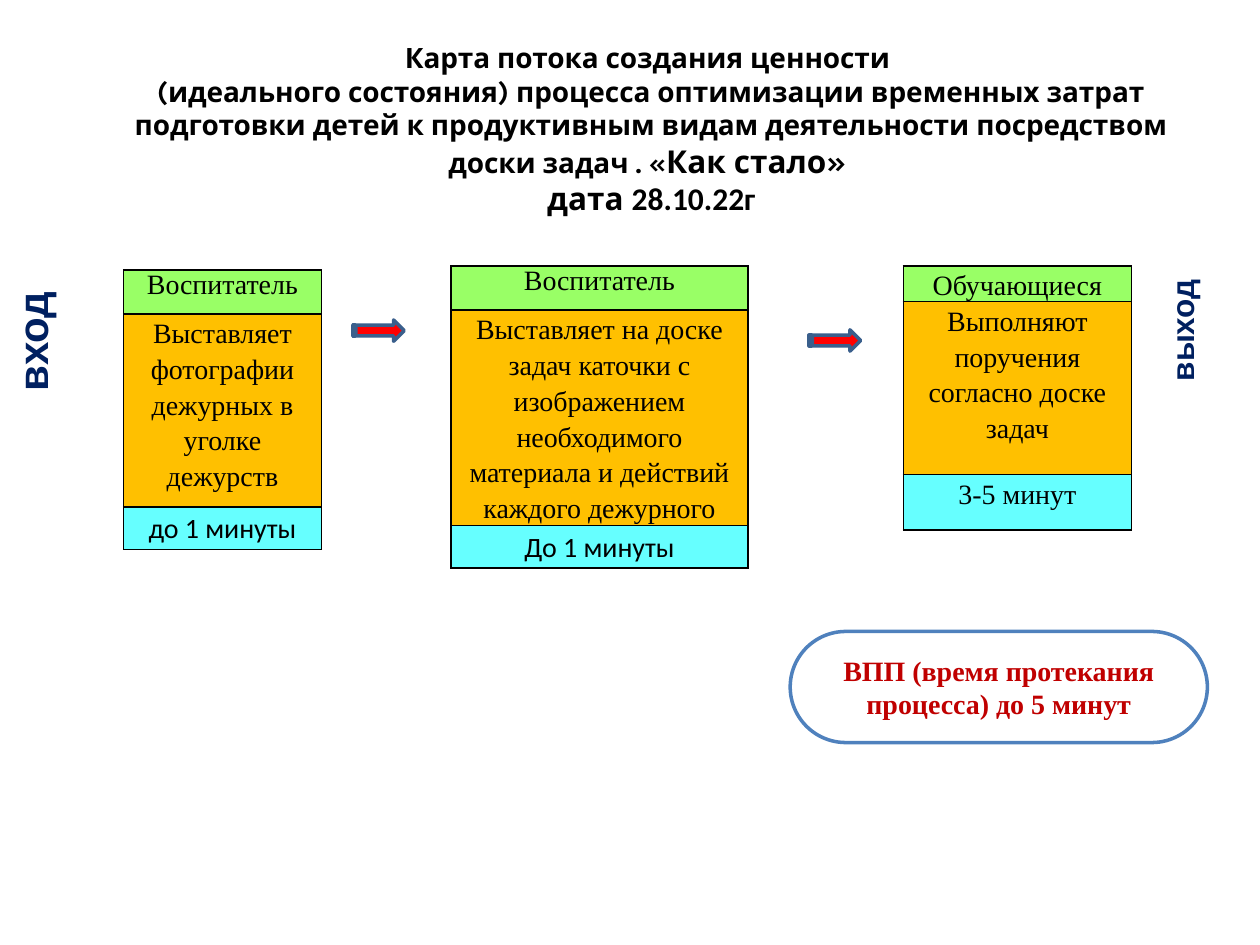
import pptx
import pptx.util
import pptx.dml.color
import pptx.enum.shapes
import pptx.enum.text
from lxml import etree
from pptx.util import Cm, Pt

COLORS = {
    "text": "000000", "border": "000000", "white": "FFFFFF",
    "who": "99FF66", "action": "FFC000", "duration": "66FFFF",
    "navy": "002060", "arrow": "FF0000", "arrow_line": "3A5F8C",
    "total": "C00000", "total_line": "4F81BD",
}
SERIF = "Times New Roman"
A = "http://schemas.openxmlformats.org/drawingml/2006/main"
CENTER = pptx.enum.text.PP_ALIGN.CENTER
MIDDLE = pptx.enum.text.MSO_ANCHOR.MIDDLE
SHAPES = pptx.enum.shapes.MSO_SHAPE


def rgb(name):
    return pptx.dml.color.RGBColor.from_string(COLORS[name])


def box_cm(box):
    return [Cm(length) for length in box]


def style(paragraph, size, face, color, bold=False):
    paragraph.alignment = CENTER
    font = paragraph.font
    font.size, font.name, font.bold = Pt(size), face, bold
    font.color.rgb = rgb(color)


def add_heading(slide, box):
    heading = slide.shapes.title
    heading.left, heading.top, heading.width, heading.height = box_cm(box)
    frame = heading.text_frame
    frame.auto_size = pptx.enum.text.MSO_AUTO_SIZE.NONE
    frame.vertical_anchor = MIDDLE
    paragraph = frame.paragraphs[0]
    style(paragraph, 16, "Karla", "text", bold=True)

    def add_part(text, size=16, face="Karla"):
        part = paragraph.add_run()
        part.text = text
        part.font.size, part.font.name = Pt(size), face

    add_part("Карта потока создания ценности ")
    paragraph.add_line_break()
    add_part("(идеального состояния) процесса оптимизации временных затрат "
             "подготовки детей к продуктивным видам деятельности "
             "посредством доски задач . «")
    add_part("Как стало» ", 18)
    paragraph.add_line_break()
    add_part("дата ", 18)
    add_part("28.10.22г", 18, "Calibri")


def add_borders(cell):
    properties = cell._tc.get_or_add_tcPr()
    for side in ("lnL", "lnR", "lnT", "lnB"):
        line = etree.SubElement(properties, f"{{{A}}}{side}", w=str(Pt(1)))
        fill = etree.SubElement(line, f"{{{A}}}solidFill")
        etree.SubElement(fill, f"{{{A}}}srgbClr", val=COLORS["border"])


def add_step(slide, left, top, width, rows):
    """Stack of who acts, the action and its duration."""
    heights = [row[0] for row in rows]
    box = box_cm((left, top, width, sum(heights)))
    table = slide.shapes.add_table(len(rows), 1, *box).table
    table.first_row = table.horz_banding = False
    fills = ("who", "action", "duration")
    for index, (height, text, face, spacing) in enumerate(rows):
        table.rows[index].height = Cm(height)
        cell = table.cell(index, 0)
        add_borders(cell)
        cell.fill.solid()
        cell.fill.fore_color.rgb = rgb(fills[index])
        cell.margin_left = cell.margin_right = Cm(0.19)
        cell.margin_top = cell.margin_bottom = 0
        cell.text = text
        paragraph = cell.text_frame.paragraphs[0]
        style(paragraph, 16, face, "text")
        paragraph.line_spacing = spacing


def add_side_label(slide, box, text, size, wrap):
    label = slide.shapes.add_textbox(*box_cm(box))
    label.rotation = 270
    frame = label.text_frame
    frame.word_wrap = wrap
    frame.auto_size = pptx.enum.text.MSO_AUTO_SIZE.SHAPE_TO_FIT_TEXT
    frame.text = text
    style(frame.paragraphs[0], size, "Arial", "navy", bold=True)


def add_outlined(slide, preset, box, fill, line):
    shape = slide.shapes.add_shape(preset, *box_cm(box))
    shape.shadow.inherit = False
    shape.fill.solid()
    shape.fill.fore_color.rgb = rgb(fill)
    shape.line.color.rgb = rgb(line)
    shape.line.width = Pt(2)
    return shape


def add_total_time(slide, box):
    total = add_outlined(slide, SHAPES.ROUNDED_RECTANGLE, box,
                         "white", "total_line")
    total.adjustments[0] = 0.5
    frame = total.text_frame
    frame.word_wrap = True
    frame.vertical_anchor = MIDDLE
    frame.text = "ВПП (время протекания процесса) до 5 минут"
    style(frame.paragraphs[0], 16, SERIF, "total", bold=True)


def main():
    deck = pptx.Presentation()
    deck.slide_width, deck.slide_height = Cm(25.4), Cm(19.05)
    slide = deck.slides.add_slide(deck.slide_layouts[5])

    add_heading(slide, (1.7, 0.75, 22.86, 3.7))

    # Process steps: row height, text, font, line spacing
    add_step(slide, 2.49, 5.44, 3.99, [
        (0.89, "Воспитатель", SERIF, 1.0),
        (3.89, "Выставляет фотографии дежурных в уголке дежурств",
         SERIF, 1.15),
        (0.86, "до 1 минуты", "Calibri", 1.15)])
    add_step(slide, 18.21, 5.36, 4.6, [
        (0.72, "Обучающиеся", SERIF, 1.15),
        (3.48, "Выполняют поручения согласно доске задач", SERIF, 1.15),
        (1.12, "3-5 минут", SERIF, 1.15)])
    add_step(slide, 9.09, 5.36, 5.99, [
        (0.89, "Воспитатель", SERIF, 1.0),
        (4.34, "Выставляет на доске задач каточки с изображением "
         "необходимого материала и действий каждого дежурного",
         SERIF, 1.15),
        (0.86, "До 1 минуты", "Calibri", 1.15)])

    # Entry and exit of the flow
    add_side_label(slide, (-0.89, 6.25, 3.05, 1.27), "вход", 24, True)
    add_side_label(slide, (22.53, 6.15, 2.59, 1.02), "выход", 18, False)

    # Arrows between the steps
    for left, top in ((7.11, 6.45), (16.31, 6.65)):
        add_outlined(slide, SHAPES.STRIPED_RIGHT_ARROW,
                     (left, top, 1.04, 0.43), "arrow", "arrow_line")

    add_total_time(slide, (15.93, 12.73, 8.41, 2.24))
    deck.save("out.pptx")


if __name__ == "__main__":
    main()
